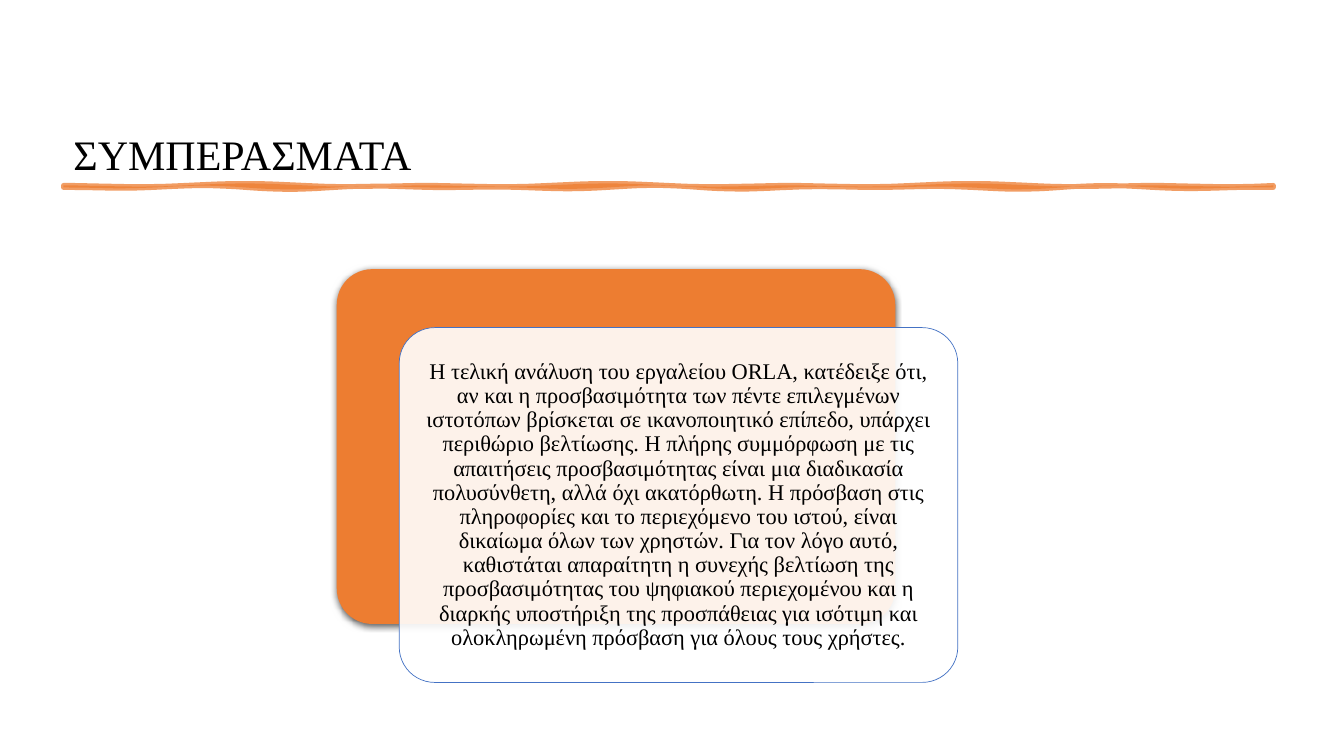
import math

from lxml import etree
from pptx import Presentation
from pptx import util as u
from pptx.dml.color import RGBColor
from pptx.enum import shapes, text
from pptx.oxml.ns import qn

COLORS = {"accent": "ED7D31", "outline": "4472C4", "paper": "FFFFFF", "ink": "000000"}
UNITS_PER_INCH = 1000  # freeform units

CONCLUSION = (
    "Η τελική ανάλυση του εργαλείου ORLA, κατέδειξε ότι, αν και η προσβασιμότητα "
    "των πέντε επιλεγμένων ιστοτόπων βρίσκεται σε ικανοποιητικό επίπεδο, υπάρχει "
    "περιθώριο βελτίωσης. Η πλήρης συμμόρφωση με τις απαιτήσεις προσβασιμότητας "
    "είναι μια διαδικασία πολυσύνθετη, αλλά όχι ακατόρθωτη. Η πρόσβαση στις "
    "πληροφορίες και το περιεχόμενο του ιστού, είναι δικαίωμα όλων των χρηστών. "
    "Για τον λόγο αυτό, καθιστάται απαραίτητη η συνεχής βελτίωση της "
    "προσβασιμότητας του ψηφιακού περιεχομένου και η διαρκής υποστήριξη της "
    "προσπάθειας για ισότιμη και ολοκληρωμένη πρόσβαση για όλους τους χρήστες.")


def wave(x, length, swell_length):
    """A ripple from -1 to 1 whose height swells and fades along x."""
    return math.sin(math.tau * x / length) * math.sin(math.tau * x / swell_length)


class SlideBuilder:
    def __init__(self, s):
        self.s = s
        self.font = "Times New Roman"

    def color(self, name):
        return RGBColor.from_string(COLORS[name])

    def fade(self, clr, percent):
        etree.SubElement(clr, qn("a:alpha"), val=str(percent * 1000))

    def paint(self, sp, fill, line=None, width=0, fill_alpha=100, line_alpha=100):
        sp.shadow.inherit = False
        sp.fill.solid()
        sp.fill.fore_color.rgb = self.color(fill)
        if line:
            sp.line.color.rgb = self.color(line)
            sp.line.width = u.Pt(width)
        else:
            sp.line.fill.background()
        props = sp._element.spPr
        for owner, alpha in (("", fill_alpha), ("a:ln/", line_alpha)):
            if alpha < 100:
                clr = props.find(owner + "a:solidFill/a:srgbClr", props.nsmap)
                self.fade(clr, alpha)

    def card(self, x, y, w, h, **style):
        sp = self.s.shapes.add_shape(shapes.MSO_SHAPE.ROUNDED_RECTANGLE,
                                     *map(u.Inches, (x, y, w, h)))
        sp.adjustments[0] = 0.1
        self.paint(sp, **style)
        return sp

    def shadow(self, sp, blur, dist, alpha):
        effects = sp._element.spPr.find(qn("a:effectLst"))
        outer = etree.SubElement(effects, qn("a:outerShdw"), blurRad=str(u.Pt(blur)),
                                 dist=str(u.Pt(dist)), dir="5400000", algn="ctr",
                                 rotWithShape="0")
        clr = etree.SubElement(outer, qn("a:srgbClr"), val=COLORS["ink"])
        self.fade(clr, alpha)

    def text(self, x, y, w, h, words, size, frame, align=None):
        tf = self.s.shapes.add_textbox(*map(u.Inches, (x, y, w, h))).text_frame
        for name, value in {"word_wrap": True, **frame}.items():
            setattr(tf, name, value)
        p = tf.paragraphs[0]
        p.alignment, p.line_spacing = align, 0.9
        r = p.add_run()
        r.text = words
        for name, value in {"name": self.font, "size": u.Pt(size)}.items():
            setattr(r.font, name, value)
        r.font.color.rgb = self.color("ink")

    def brush_rule(self, x, y, w, h, ripple=0.02, step=0.1):
        # Top edge runs left to right, bottom edge runs back; each has its own wave
        stops = [i * step for i in range(round(w / step) + 1)]
        top = [(stop, ripple * wave(stop, 2.4, 7.2)) for stop in stops]
        bottom = [(stop, h + ripple * wave(stop, 1.8, 8)) for stop in reversed(stops)]
        points = [(px * UNITS_PER_INCH, py * UNITS_PER_INCH) for px, py in top + bottom]
        builder = self.s.shapes.build_freeform(*points[0],
                                               scale=u.Inches(1) / UNITS_PER_INCH)
        builder.add_line_segments(points[1:])
        sp = builder.convert_to_shape(u.Inches(x), u.Inches(y))
        self.paint(sp, "accent", "accent", 3.5, fill_alpha=75, line_alpha=75)


def main():
    prs = Presentation()
    prs.slide_width, prs.slide_height = u.Inches(13.33), u.Inches(7.5)
    b = SlideBuilder(prs.slides.add_slide(prs.slide_layouts[6]))

    # Title and brush rule
    b.text(0.63, 0.26, 12.05, 1.57, "ΣΥΜΠΕΡΑΣΜΑΤΑ", 30,
           {"vertical_anchor": text.MSO_ANCHOR.BOTTOM})
    b.brush_rule(0.63, 1.84, 12, 0.02)

    # Two cards of one size, the front one shifted right and down
    left, top, width, height = 3.34, 2.67, 5.54, 3.52
    front_left, front_top = left + 0.62, top + 0.58
    back = b.card(left, top, width, height, fill="accent")
    b.shadow(back, blur=4.5, dist=1.5, alpha=63)
    b.card(front_left, front_top, width, height, fill="paper", line="outline",
           width=0.5, fill_alpha=90)

    # Conclusion, inset evenly in the front card
    inset = 0.1
    margins = {f"margin_{side}": u.Inches(0.07)
               for side in ("left", "top", "right", "bottom")}
    b.text(front_left + inset, front_top + inset, width - 2 * inset, height - 2 * inset,
           CONCLUSION, 16, {"vertical_anchor": text.MSO_ANCHOR.MIDDLE, **margins},
           text.PP_ALIGN.CENTER)

    prs.save("out.pptx")


if __name__ == "__main__":
    main()
